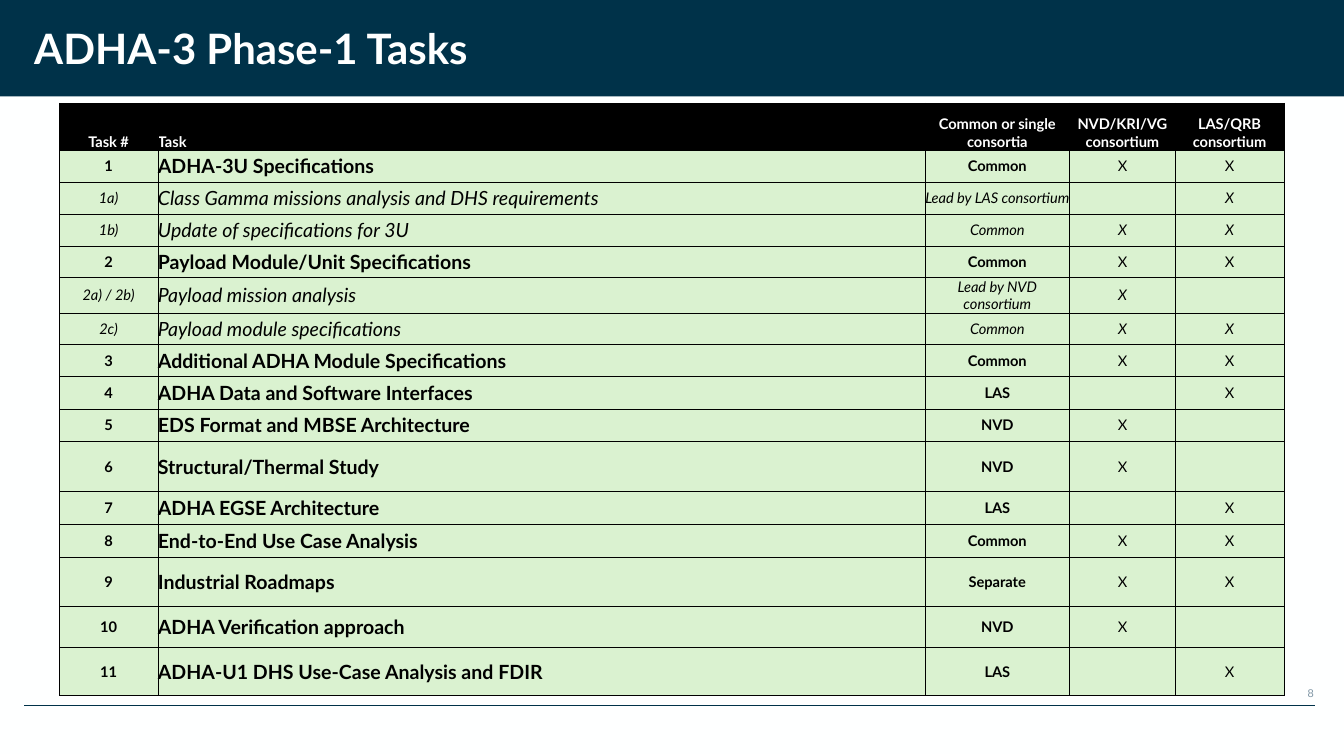
import pptx
import pptx.util
import pptx.dml.color
import pptx.enum.shapes
import pptx.enum.text
import pptx.oxml
import pptx.oxml.ns

Pt = pptx.util.Pt
ALIGN = pptx.enum.text.PP_ALIGN
ANCHOR = pptx.enum.text.MSO_ANCHOR
SPACE = pptx.oxml.ns.nsdecls("a")

NAVY, WHITE, BLACK = "003249", "FEFFFF", "000000"
GREEN, GREY = "DAF2D0", "8197A6"

WIDTHS = [70.6, 549.4, 103.7, 75.6, 77.8]
HEAD = ["Task #", "Task", "Common or single consortia",
        "NVD/KRI/VG\vconsortium", "LAS/QRB\vconsortium"]
HEAD_HIGH = 33.8
TASKS = [
    (22.8, "1", "ADHA-3U Specifications", "Common", "X", "X"),
    (22.8, "1a)", "Class Gamma missions analysis and DHS requirements",
     "Lead by LAS consortium", "", "X"),
    (22.8, "1b)", "Update of specifications for 3U", "Common", "X", "X"),
    (22.8, "2", "Payload Module/Unit Specifications", "Common", "X", "X"),
    (25.2, "2a) / 2b)", "Payload mission analysis",
     "Lead by NVD consortium", "X", ""),
    (22.8, "2c)", "Payload module specifications", "Common", "X", "X"),
    (22.8, "3", "Additional ADHA Module Specifications", "Common", "X", "X"),
    (23.3, "4", "ADHA Data and Software Interfaces", "LAS", "", "X"),
    (23.3, "5", "EDS Format and MBSE Architecture", "NVD", "X", ""),
    (35.8, "6", "Structural/Thermal Study", "NVD", "X", ""),
    (23.5, "7", "ADHA EGSE Architecture", "LAS", "", "X"),
    (23.5, "8", "End-to-End Use Case Analysis", "Common", "X", "X"),
    (35.4, "9", "Industrial Roadmaps", "Separate", "X", "X"),
    (29.4, "10", "ADHA Verification approach", "NVD", "X", ""),
    (34.5, "11", "ADHA-U1 DHS Use-Case Analysis and FDIR", "LAS", "", "X"),
]


def paint(fill, shade):
    fill.solid()
    fill.fore_color.rgb = pptx.dml.color.RGBColor.from_string(shade)


def style(para, size, shade, face="Lato", bold=False, slant=False,
          align=ALIGN.LEFT):
    para.alignment = align
    font = para.font
    font.name, font.size = face, Pt(size)
    font.bold, font.italic = bold, slant
    paint(font.fill, shade)


def add_title(slide, text):
    title = slide.shapes.title
    title.left, title.top, title.width, title.height = map(
        Pt, (17.3, 12.2, 796.3, 44.6))
    frame = title.text_frame
    frame.text = text
    frame.vertical_anchor = ANCHOR.MIDDLE
    style(frame.paragraphs[0], 30, WHITE, bold=True)


def add_band(slide, width):
    band = slide.shapes.add_shape(
        pptx.enum.shapes.MSO_SHAPE.RECTANGLE, 0, 0, width, Pt(69.1))
    band.shadow.inherit = False
    paint(band.fill, NAVY)
    band.line.fill.background()
    slide.shapes.title.element.addprevious(band.element)


def add_rule(slide):
    rule = slide.shapes.add_connector(
        pptx.enum.shapes.MSO_CONNECTOR.STRAIGHT,
        Pt(17.3), Pt(505.4), Pt(941.8), Pt(505.4))
    paint(rule.line.fill, NAVY)
    rule.line.width = Pt(0.75)
    rule.element.spPr.append(
        pptx.oxml.parse_xml(f"<a:effectLst {SPACE}/>"))


def add_number(slide, text):
    box = slide.shapes.add_textbox(Pt(645.8), Pt(488.2), Pt(295.2), Pt(17.3))
    frame = box.text_frame
    frame.word_wrap = True
    frame.margin_right = 0
    frame.text = text
    style(frame.paragraphs[0], 8, GREY, face="Arial", align=ALIGN.RIGHT)


def fill_cell(cell, text, back, anchor, **look):
    cell.text = text
    cell.margin_left = cell.margin_right = 0
    cell.margin_top = cell.margin_bottom = 0
    cell.vertical_anchor = anchor
    paint(cell.fill, back)
    style(cell.text_frame.paragraphs[0], **look)


def add_edges(table):
    for props in table.iter(pptx.oxml.ns.qn("a:tcPr")):
        for spot, side in enumerate("LRTB"):
            props.insert(spot, pptx.oxml.parse_xml(
                f'<a:ln{side} {SPACE} w="{int(Pt(0.5))}"><a:solidFill>'
                f'<a:srgbClr val="{BLACK}"/></a:solidFill></a:ln{side}>'))


def add_tasks(slide):
    highs = [HEAD_HIGH] + [task[0] for task in TASKS]
    shape = slide.shapes.add_table(
        len(highs), len(WIDTHS), Pt(42.5), Pt(73.9),
        Pt(sum(WIDTHS)), Pt(sum(highs)))
    grid = shape.table
    for col, width in zip(grid.columns, WIDTHS):
        col.width = Pt(width)
    for row, high in zip(grid.rows, highs):
        row.height = Pt(high)
    sides = [ALIGN.LEFT if col == 1 else ALIGN.CENTER
             for col in range(len(WIDTHS))]
    for col, text in enumerate(HEAD):
        fill_cell(grid.cell(0, col), text, BLACK, ANCHOR.BOTTOM, size=10.5,
                  shade="FFFFFF", bold=True, align=sides[col])
    for row, (_, *texts) in enumerate(TASKS, 1):
        sub = texts[0].endswith(")")
        for col, text in enumerate(texts):
            fill_cell(grid.cell(row, col), text, GREEN, ANCHOR.MIDDLE,
                      size=14 if col == 1 else 10.5, shade=BLACK,
                      bold=not sub and col < 3, slant=sub, align=sides[col])
    add_edges(shape.element)


def main():
    deck = pptx.Presentation()
    deck.slide_width, deck.slide_height = Pt(962.6), Pt(540)
    slide = deck.slides.add_slide(deck.slide_layouts[5])
    paint(slide.background.fill, WHITE)
    add_title(slide, "ADHA-3 Phase-1 Tasks")
    add_band(slide, deck.slide_width)
    add_rule(slide)
    add_number(slide, "8")
    add_tasks(slide)
    deck.save("out.pptx")


if __name__ == "__main__":
    main()
